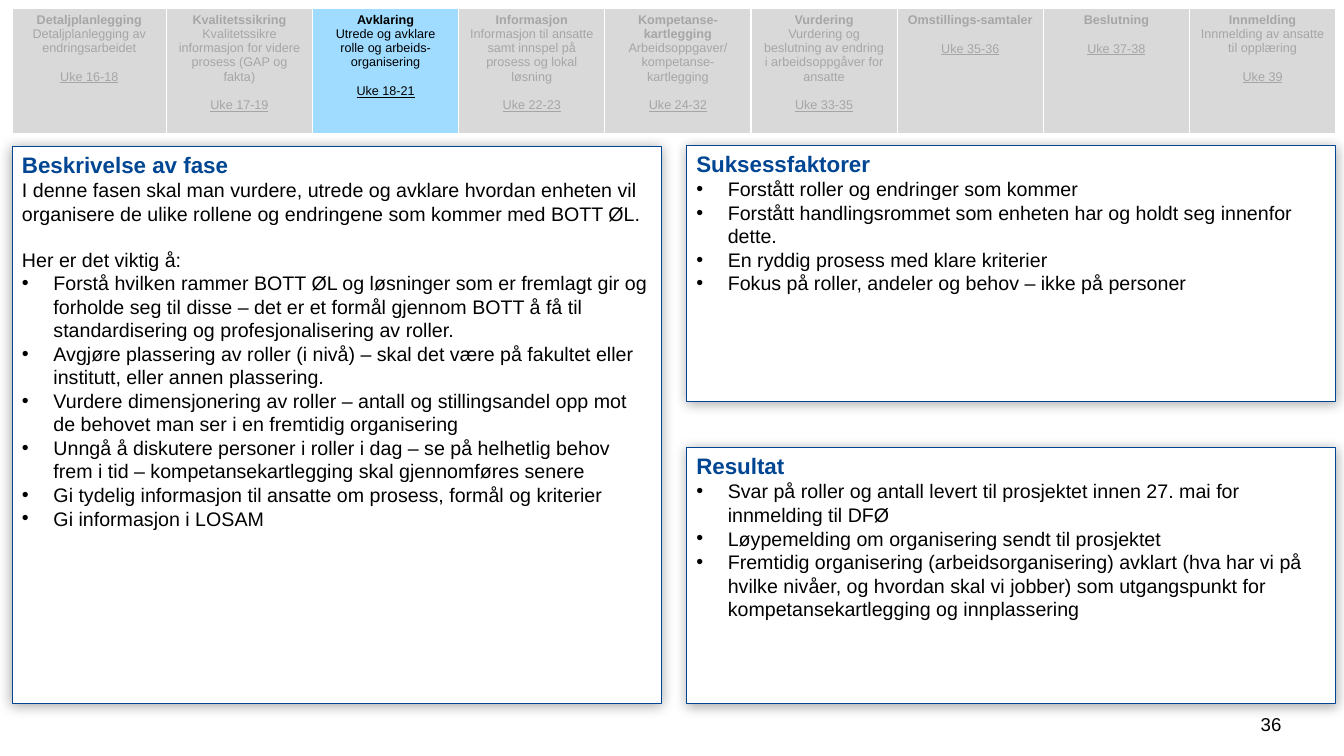
from lxml.etree import SubElement
from pptx import Presentation
from pptx.dml.color import RGBColor
from pptx.enum.shapes import MSO_SHAPE
from pptx.enum.text import MSO_ANCHOR, PP_ALIGN
from pptx.oxml.ns import qn
from pptx.util import Pt

PHASES = [
    ("Detaljplanlegging", "Detaljplanlegging av endringsarbeidet", "Uke 16-18"),
    ("Kvalitetssikring", "Kvalitetssikre informasjon for videre prosess (GAP og fakta)", "Uke 17-19"),
    ("Avklaring", "Utrede og avklare rolle og arbeids-organisering", "Uke 18-21"),
    ("Informasjon", "Informasjon til ansatte samt innspel på prosess og lokal løsning", "Uke 22-23"),
    ("Kompetanse-kartlegging", "Arbeidsoppgaver/\vkompetanse-kartlegging", "Uke 24-32"),
    ("Vurdering", "Vurdering og beslutning av endring i arbeidsoppgåver for ansatte", "Uke 33-35"),
    ("Omstillings-samtaler", "", "Uke 35-36"),
    ("Beslutning", "", "Uke 37-38"),
    ("Innmelding", "Innmelding av ansatte til opplæring", "Uke 39"),
]
CURRENT_PHASE = "Avklaring"

DESCRIPTION = [
    "I denne fasen skal man vurdere, utrede og avklare hvordan enheten vil organisere "
    "de ulike rollene og endringene som kommer med BOTT ØL.",
    "Her er det viktig å:",
]
STEPS = [
    "Forstå hvilken rammer BOTT ØL og løsninger som er fremlagt gir og forholde seg til disse "
    "– det er et formål gjennom BOTT å få til standardisering og profesjonalisering av roller.",
    "Avgjøre plassering av roller (i nivå) – skal det være på fakultet eller institutt, "
    "eller annen plassering.",
    "Vurdere dimensjonering av roller – antall og stillingsandel opp mot de behovet man ser "
    "i en fremtidig organisering",
    "Unngå å diskutere personer i roller i dag – se på helhetlig behov frem i tid "
    "– kompetansekartlegging skal gjennomføres senere",
    "Gi tydelig informasjon til ansatte om prosess, formål og kriterier",
    "Gi informasjon i LOSAM",
]
SUCCESS_FACTORS = [
    "Forstått roller og endringer som kommer",
    "Forstått handlingsrommet som enheten har og holdt seg innenfor dette.",
    "En ryddig prosess med klare kriterier",
    "Fokus på roller, andeler og behov – ikke på personer",
]
RESULTS = [
    "Svar på roller og antall levert til prosjektet innen 27. mai for innmelding til DFØ",
    "Løypemelding om organisering sendt til prosjektet",
    "Fremtidig organisering (arbeidsorganisering) avklart (hva har vi på hvilke nivåer, "
    "og hvordan skal vi jobber) som utgangspunkt for kompetansekartlegging og innplassering",
]


def rgb(value):
    return RGBColor.from_string(value)


class PhaseSlide:
    font = "Arial"
    blue, black, white = "014693", "000000", "FFFFFF"
    grey_text, grey_fill, active_fill = "A6A6A6", "D9D9D9", "A0DCFF"
    line_height = 1.15

    def __init__(self, prs):
        self.s = prs.slides.add_slide(prs.slide_layouts[6])

    def paragraph(self, tf, text, size, color, bold=False, underline=False,
                  align=PP_ALIGN.LEFT, bullet=False, gap=False):
        p = tf.paragraphs[0]
        if p.runs:
            p = tf.add_paragraph()
        p.alignment = align
        if gap:
            p.space_before = Pt(size * self.line_height)
        if bullet:
            pPr = p._p.get_or_add_pPr()
            pPr.set("marL", str(Pt(22.5)))
            pPr.set("indent", str(-Pt(22.5)))
            SubElement(pPr, qn("a:buFont"), typeface=self.font)
            SubElement(pPr, qn("a:buChar"), char="•")
        for i, part in enumerate(text.split("\v")):
            if i:
                p.add_line_break()
            r = p.add_run()
            r.text = part
            r.font.name, r.font.size = self.font, Pt(size)
            r.font.bold, r.font.underline = bold, underline
            r.font.color.rgb = rgb(color)

    def panel(self, left, top, width, height, heading, intro, bullets):
        sp = self.s.shapes.add_shape(MSO_SHAPE.RECTANGLE, Pt(left), Pt(top), Pt(width), Pt(height))
        sp.fill.solid()
        sp.fill.fore_color.rgb = rgb(self.white)
        sp.line.color.rgb = rgb(self.blue)
        sp.line.width = Pt(0.75)
        sp.shadow.inherit = False
        effects = sp._element.spPr.find(qn("a:effectLst"))
        shadow = SubElement(effects, qn("a:outerShdw"), blurRad=str(Pt(9)), dist=str(Pt(1)),
                            dir="5400000", algn="t", rotWithShape="0")
        tone = SubElement(shadow, qn("a:srgbClr"), val=self.black)
        SubElement(tone, qn("a:alpha"), val="35000")
        tf = sp.text_frame
        tf.word_wrap = True
        tf.vertical_anchor = MSO_ANCHOR.TOP
        self.paragraph(tf, heading, 16, self.blue, bold=True)
        for i, text in enumerate(intro):
            self.paragraph(tf, text, 14, self.black, gap=i > 0)
        for text in bullets:
            self.paragraph(tf, text, 14, self.black, bullet=True)

    def borders(self, cell):
        tcPr = cell._tc.get_or_add_tcPr()
        for side, width in (("L", 1), ("R", 1), ("T", 1), ("B", 3)):
            ln = SubElement(tcPr, qn(f"a:ln{side}"), w=str(Pt(width)))
            fill = SubElement(ln, qn("a:solidFill"))
            SubElement(fill, qn("a:srgbClr"), val=self.white)

    def timeline(self, left, top, first_width, col_width, height, phases, current):
        widths = [first_width] + [col_width] * (len(phases) - 1)
        table = self.s.shapes.add_table(1, len(phases), Pt(left), Pt(top),
                                        Pt(sum(widths)), Pt(height)).table
        table.first_row = table.horz_banding = False
        for i, (name, task, weeks) in enumerate(phases):
            table.columns[i].width = Pt(widths[i])
            cell = table.cell(0, i)
            active = name == current
            self.borders(cell)
            cell.fill.solid()
            cell.fill.fore_color.rgb = rgb(self.active_fill if active else self.grey_fill)
            color = self.black if active else self.grey_text
            tf = cell.text_frame
            self.paragraph(tf, name, 9, color, bold=True, align=PP_ALIGN.CENTER)
            if task:
                self.paragraph(tf, task, 9, color, align=PP_ALIGN.CENTER)
            self.paragraph(tf, weeks, 9, color, underline=True, align=PP_ALIGN.CENTER, gap=True)

    def label(self, left, top, width, height, text, size):
        tf = self.s.shapes.add_textbox(Pt(left), Pt(top), Pt(width), Pt(height)).text_frame
        tf.word_wrap = True
        self.paragraph(tf, text, size, self.black, align=PP_ALIGN.CENTER)


def main():
    prs = Presentation()
    prs.slide_width, prs.slide_height = Pt(960), Pt(540)
    slide = PhaseSlide(prs)
    left, right, width, bottom = 8.64, 490.3, 463.7, 502.6
    slide.label(889.9, 505.4, 36, 28.8, "36", 13.3)
    slide.panel(left, 104.4, width, bottom - 104.4, "Beskrivelse av fase", DESCRIPTION, STEPS)
    half = 182.9
    slide.panel(right, 103.7, width, half, "Suksessfaktorer", [], SUCCESS_FACTORS)
    slide.panel(right, bottom - half, width, half, "Resultat", [], RESULTS)
    slide.timeline(left, 5.76, 110.2, 104.4, 90.7, PHASES, CURRENT_PHASE)
    prs.save("out.pptx")


if __name__ == "__main__":
    main()
